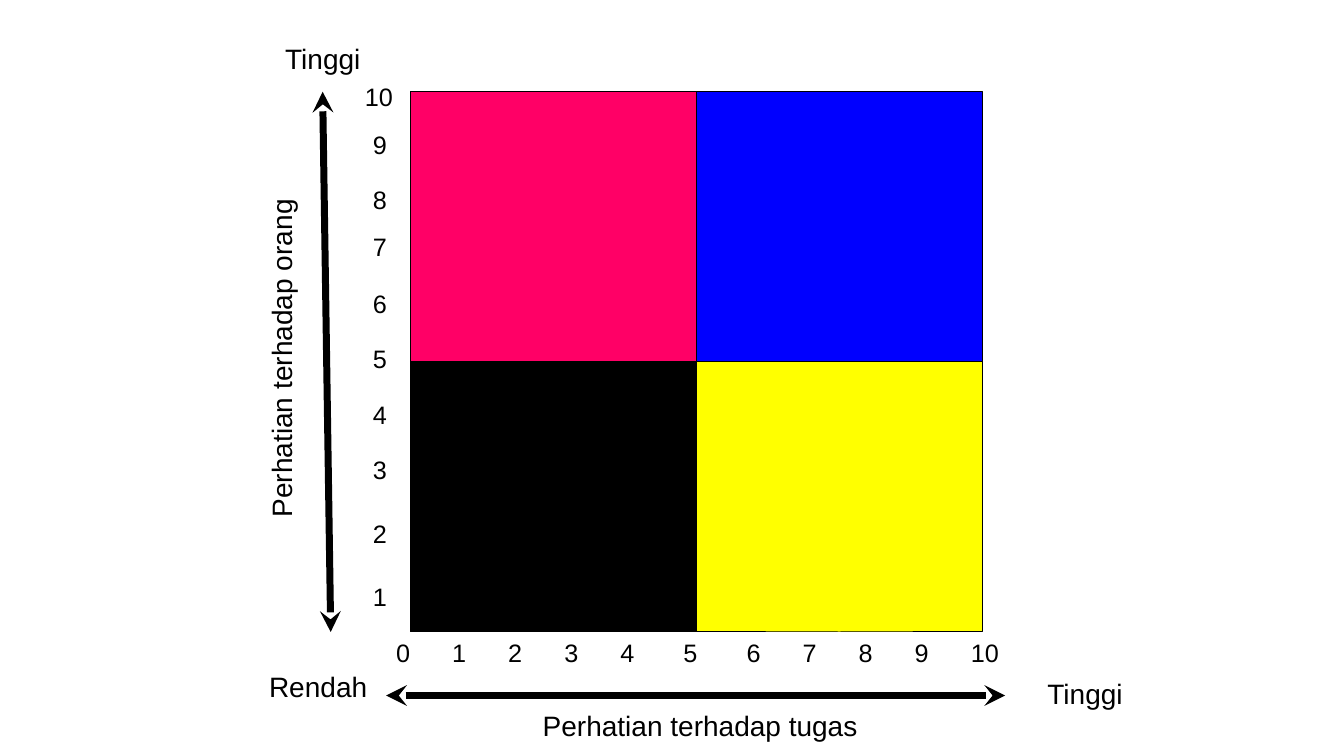
import pptx
import pptx.util
import pptx.dml.color
import pptx.enum.shapes
import pptx.enum.text
import pptx.oxml.ns
from lxml import etree

Inches = pptx.util.Inches
Pt = pptx.util.Pt
RGB = pptx.dml.color.RGBColor.from_string
qn = pptx.oxml.ns.qn
ALIGN = pptx.enum.text.PP_ALIGN

THEME = {
    "ink": RGB("000000"),
    "pink": RGB("FF0066"),
    "blue": RGB("0000FF"),
    "yellow": RGB("FFFF00"),
    "font": "Arial",
    "scale_size": Pt(18),
    "label_size": Pt(20),
    "border": Pt(0.75),
    "axis": Pt(5),
}

deck = pptx.Presentation()
deck.slide_width, deck.slide_height = Inches(13.33), Inches(7.5)
slide = deck.slides.add_slide(deck.slide_layouts[6])


def add_label(text, left, top, width, height, size, align=ALIGN.LEFT, turn=0):
    label = slide.shapes.add_textbox(*map(Inches, (left, top, width, height)))
    label.rotation = turn
    label.text_frame.word_wrap = True
    label.text_frame.auto_size = pptx.enum.text.MSO_AUTO_SIZE.SHAPE_TO_FIT_TEXT
    paragraph = label.text_frame.paragraphs[0]
    paragraph.alignment = align
    run = paragraph.add_run()
    run.text = text
    for key, value in {"name": THEME["font"], "size": size}.items():
        setattr(run.font, key, value)
    run.font.color.rgb = THEME["ink"]
    return paragraph


# Four quadrants of the grid
grid_left, grid_top, cell_width, cell_height = 4.07, 0.91, 2.835, 2.68
quadrants = [("pink", 0, 0), ("blue", 1, 0), ("yellow", 1, 1), ("black", 0, 1)]
for colour, column, row in quadrants:
    quadrant = slide.shapes.add_shape(
        pptx.enum.shapes.MSO_SHAPE.RECTANGLE,
        Inches(grid_left + column * cell_width),
        Inches(grid_top + row * cell_height),
        Inches(cell_width), Inches(cell_height))
    quadrant.shadow.inherit = False
    quadrant.fill.solid()
    quadrant.fill.fore_color.rgb = THEME.get(colour, THEME["ink"])
    quadrant.line.color.rgb = THEME["ink"]
    quadrant.line.width = THEME["border"]

# Double-headed axes: task, then people
for ends in [(3.83, 6.9, 9.97, 6.9), (3.2, 0.91, 3.28, 6.27)]:
    axis = slide.shapes.add_connector(
        pptx.enum.shapes.MSO_CONNECTOR.STRAIGHT, *map(Inches, ends))
    axis.line.color.rgb = THEME["ink"]
    axis.line.width = THEME["axis"]
    for arrowhead in ("a:headEnd", "a:tailEnd"):
        etree.SubElement(axis.line._get_or_add_ln(), qn(arrowhead), type="stealth")
    etree.SubElement(axis._element.spPr, qn("a:effectLst"))

# Task scale: even tab stops, slightly wider on both sides of 5
task_scale = add_label("\t".join(str(mark) for mark in range(11)),
                       3.83, 6.27, 6.61, 0.4, THEME["scale_size"])
tab_list = etree.SubElement(task_scale._p.get_or_add_pPr(), qn("a:tabLst"))
for mark in range(1, 11):
    stop = 0.556 * mark + 0.07 * min(max(mark - 4, 0), 2)
    etree.SubElement(tab_list, qn("a:tab"), pos=str(Inches(stop)), algn="l")

# People scale, from 10 down to 1
people_tops = [0.76, 1.23, 1.78, 2.25, 2.81, 3.36, 3.91, 4.46, 5.09, 5.72]
for mark, top in zip(range(10, 0, -1), people_tops):
    add_label(str(mark), 3.52 if mark == 10 else 3.6, top, 0.63, 0.4,
              THEME["scale_size"])

# Axis titles
add_label("Perhatian terhadap tugas", 4.7, 6.98, 4.49, 0.43,
          THEME["label_size"], ALIGN.CENTER)
add_label("Perhatian terhadap orang", 0.62, 3.34, 4.33, 0.43,
          THEME["label_size"], ALIGN.CENTER, 270)

# Low and high ends
for text, left, top, width in [("Tinggi", 2.73, 0.36, 1.1),
                               ("Rendah", 2.57, 6.59, 1.3),
                               ("Tinggi", 10.29, 6.66, 1.1)]:
    add_label(text, left, top, width, 0.43, THEME["label_size"])

deck.save("out.pptx")
